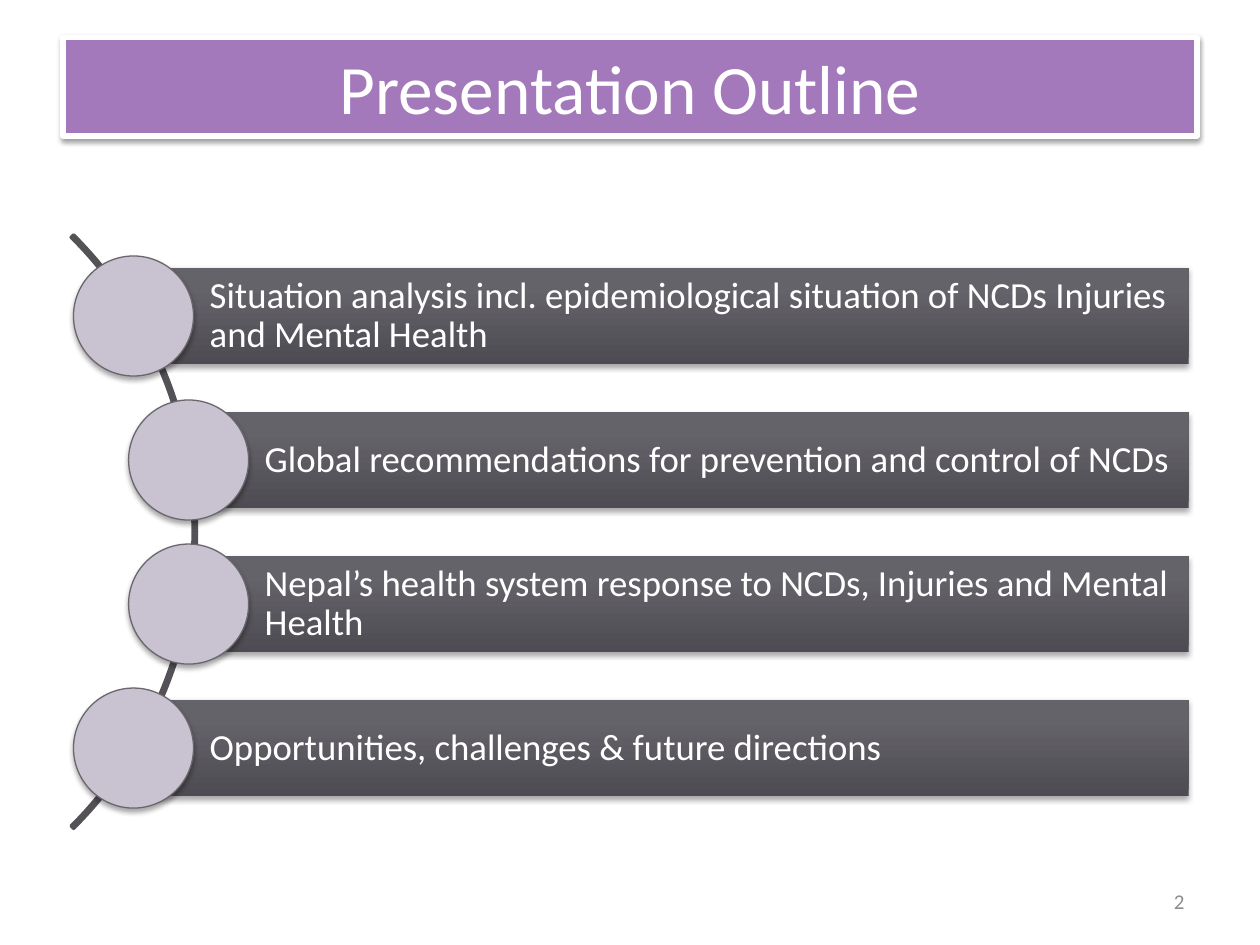
from dataclasses import dataclass

from lxml.etree import SubElement
from pptx import Presentation
from pptx.dml.color import RGBColor
from pptx.enum.shapes import MSO_SHAPE
from pptx.enum.text import MSO_ANCHOR, PP_ALIGN
from pptx.oxml.ns import qn
from pptx.shapes.autoshape import Shape
from pptx.slide import Slide
from pptx.util import Pt

WHITE = RGBColor(0xFF, 0xFF, 0xFF)
PURPLE = RGBColor(0xA3, 0x79, 0xBB)
LILAC = RGBColor(0xC9, 0xC2, 0xD1)
CIRCLE_LINE = RGBColor(0x69, 0x67, 0x6D)
ARC_LINE = RGBColor(0x54, 0x52, 0x57)
BAR_DARK = RGBColor(0x4E, 0x4C, 0x52)
BAR_LIGHT = RGBColor(0x65, 0x63, 0x6A)
NUMBER_GRAY = RGBColor(0x8C, 0x8C, 0x8C)

FONT = "Calibri"
FIRST_CENTER = 180.6
PITCH = 82.3
BAR_HEIGHT = 54.9
BAR_RIGHT = 679.2
CIRCLE_SIZE = 68.6
OUTER_CENTER = 76.3
INNER_CENTER = 107.8


@dataclass(frozen=True)
class Box:
    left: float
    top: float
    width: float
    height: float

    def lengths(self) -> tuple[Pt, Pt, Pt, Pt]:
        return Pt(self.left), Pt(self.top), Pt(self.width), Pt(self.height)


@dataclass(frozen=True)
class OutlineItem:
    center: float
    text: str


ITEMS = (
    OutlineItem(OUTER_CENTER, "Situation analysis incl. epidemiological situation of NCDs Injuries and Mental Health"),
    OutlineItem(INNER_CENTER, "Global recommendations for prevention and control of NCDs"),
    OutlineItem(INNER_CENTER, "Nepal’s health system response to NCDs, Injuries and Mental Health"),
    OutlineItem(OUTER_CENTER, "Opportunities, challenges & future directions"),
)


def add_plain_shape(slide: Slide, kind: MSO_SHAPE, box: Box) -> Shape:
    shape = slide.shapes.add_shape(kind, *box.lengths())
    shape.shadow.inherit = False
    return shape


def set_line(shape: Shape, color: RGBColor, width: float) -> None:
    shape.line.color.rgb = color
    shape.line.width = Pt(width)


def set_fill(shape: Shape, color: RGBColor) -> None:
    shape.fill.solid()
    shape.fill.fore_color.rgb = color


def add_shadow(shape: Shape, opacity: int, distance: float) -> None:
    effects = shape._element.spPr.find(qn("a:effectLst"))
    shadow = SubElement(
        effects, qn("a:outerShdw"), blurRad=str(Pt(3.1)), dist=str(Pt(distance)),
        dir="5400000", rotWithShape="0",
    )
    color = SubElement(shadow, qn("a:srgbClr"), val="000000")
    SubElement(color, qn("a:alpha"), val=str(opacity * 1000))


def write_text(shape: Shape, text: str, size: float, color: RGBColor, alignment: PP_ALIGN) -> None:
    text_frame = shape.text_frame
    text_frame.text = text
    text_frame.word_wrap = True
    text_frame.vertical_anchor = MSO_ANCHOR.MIDDLE
    paragraph = text_frame.paragraphs[0]
    paragraph.alignment = alignment
    font = paragraph.runs[0].font
    font.name = FONT
    font.size = Pt(size)
    font.color.rgb = color


def add_arc(slide: Slide) -> None:
    arc = add_plain_shape(slide, MSO_SHAPE.BLOCK_ARC, Box(-367.2, 64.1, 479.5, 479.5))
    for index, value in enumerate((189, 27, 0.004)):
        arc.adjustments[index] = value
    arc.fill.background()
    set_line(arc, ARC_LINE, 2)


def add_bar(slide: Slide, item: OutlineItem, middle: float) -> None:
    box = Box(item.center, middle - BAR_HEIGHT / 2, BAR_RIGHT - item.center, BAR_HEIGHT)
    bar = add_plain_shape(slide, MSO_SHAPE.RECTANGLE, box)
    bar.fill.gradient()
    bar.fill.gradient_angle = 90
    for stop, color, position in zip(bar.fill.gradient_stops, (BAR_DARK, BAR_LIGHT), (0, 0.8)):
        stop.color.rgb = color
        stop.position = position
    bar.line.fill.background()
    add_shadow(bar, 35, 1.8)
    write_text(bar, item.text, 21, WHITE, PP_ALIGN.LEFT)
    text_frame = bar.text_frame
    text_frame.margin_left = Pt(43.5)
    text_frame.margin_top = text_frame.margin_right = text_frame.margin_bottom = Pt(4.2)
    text_frame.paragraphs[0].line_spacing = 0.9


def add_circle(slide: Slide, item: OutlineItem, middle: float) -> None:
    radius = CIRCLE_SIZE / 2
    box = Box(item.center - radius, middle - radius, CIRCLE_SIZE, CIRCLE_SIZE)
    circle = add_plain_shape(slide, MSO_SHAPE.OVAL, box)
    set_fill(circle, LILAC)
    set_line(circle, CIRCLE_LINE, 0.75)
    add_shadow(circle, 35, 1.8)


def add_title(slide: Slide) -> None:
    title = add_plain_shape(slide, MSO_SHAPE.RECTANGLE, Box(36, 21.6, 648, 56.2))
    set_fill(title, PURPLE)
    set_line(title, WHITE, 3)
    add_shadow(title, 38, 1.6)
    write_text(title, "Presentation Outline", 39.6, WHITE, PP_ALIGN.CENTER)


def add_slide_number(slide: Slide) -> None:
    number = slide.shapes.add_textbox(*Box(516, 500.5, 168, 28.8).lengths())
    write_text(number, "2", 12, NUMBER_GRAY, PP_ALIGN.RIGHT)


def main() -> None:
    presentation = Presentation()
    presentation.slide_width = Pt(720)
    presentation.slide_height = Pt(540)
    slide = presentation.slides.add_slide(presentation.slide_layouts[6])
    add_arc(slide)
    for index, item in enumerate(ITEMS):
        middle = FIRST_CENTER + index * PITCH
        add_bar(slide, item, middle)
        add_circle(slide, item, middle)
    add_slide_number(slide)
    add_title(slide)
    presentation.save("out.pptx")


if __name__ == "__main__":
    main()
